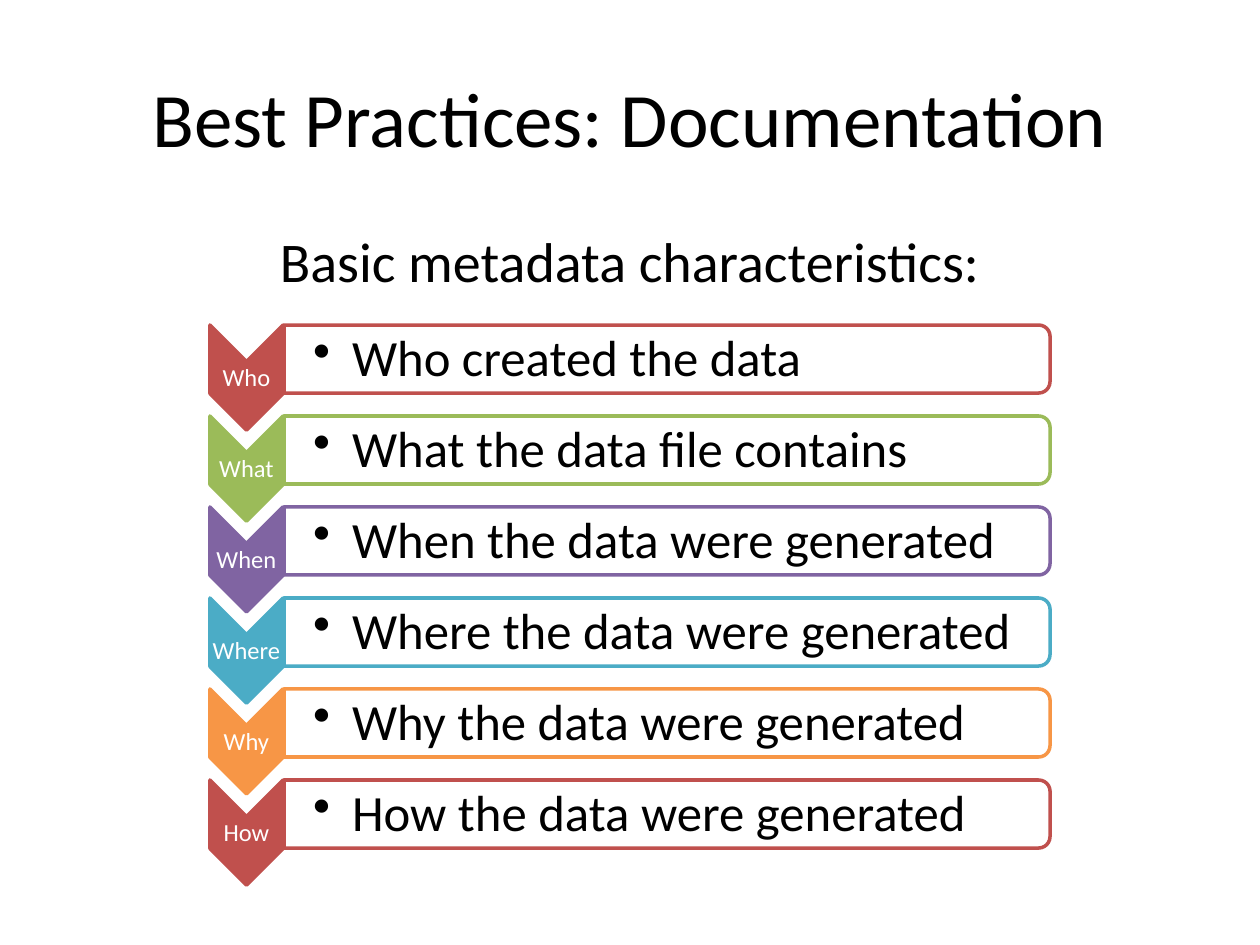
from lxml import etree
from pptx import Presentation
from pptx.dml.color import RGBColor
from pptx.enum.shapes import MSO_SHAPE
from pptx.enum.text import MSO_ANCHOR, PP_ALIGN
from pptx.oxml.ns import qn
from pptx.util import Emu, Pt

CHEVRON = MSO_SHAPE.CHEVRON
ROUND_TOP = MSO_SHAPE.ROUND_2_SAME_RECTANGLE
MIDDLE = MSO_ANCHOR.MIDDLE
TOP = MSO_ANCHOR.TOP
CENTER = PP_ALIGN.CENTER
LEFT = PP_ALIGN.LEFT

SLIDE_WIDTH, SLIDE_HEIGHT = 1260, 945
EMU_PER_PX = 9144000 / SLIDE_WIDTH
ROW_PITCH = 91
BLACK, WHITE = "000000", "FFFFFF"
RED, GREEN, PURPLE, TEAL, ORANGE = "C0504D", "9BBB59", "8064A2", "4BACC6", "F79646"

ROWS = [
    ("Who", "Who created the data", RED),
    ("What", "What the data file contains", GREEN),
    ("When", "When the data were generated", PURPLE),
    ("Where", "Where the data were generated", TEAL),
    ("Why", "Why the data were generated", ORANGE),
    ("How", "How the data were generated", RED),
]


def px(length):
    return Emu(round(length * EMU_PER_PX))


def color(value):
    return RGBColor.from_string(value)


def apply(target, values):
    for name, value in values.items():
        setattr(target, name, value)


class SlideBuilder:
    font_name = "Calibri"
    line_width = Pt(2)

    def __init__(self, slide):
        self.slide = slide

    def fill_text(self, box, text, size, ink, anchor, paragraph_format):
        apply(box.text_frame, {"word_wrap": True, "vertical_anchor": anchor})
        para = box.text_frame.paragraphs[0]
        apply(para, paragraph_format)
        span = para.add_run()
        span.text = text
        apply(span.font, {"name": self.font_name, "size": Pt(size)})
        span.font.color.rgb = color(ink)
        return para

    def placeholder(self, index, area, text, size, anchor):
        box = self.slide.placeholders[index]
        apply(box, dict(zip(("left", "top", "width", "height"), map(px, area))))
        return self.fill_text(box, text, size, BLACK, anchor, {"alignment": CENTER})

    def bullet(self, para, indent=0, mark=None):
        properties = para._p.get_or_add_pPr()
        properties.set("marL", str(px(indent)))
        properties.set("indent", str(-px(indent)))
        if mark:
            etree.SubElement(properties, qn("a:buChar")).set("char", mark)
        else:
            etree.SubElement(properties, qn("a:buNone"))

    def turned_shape(self, kind, area, fill, line, opacity=100):
        shape = self.slide.shapes.add_shape(kind, *map(px, area))
        shape.rotation = 90
        shape.shadow.inherit = False
        shape.fill.solid()
        shape.fill.fore_color.rgb = color(fill)
        shape.line.color.rgb = color(line)
        shape.line.width = self.line_width
        if opacity < 100:
            tint = shape._element.spPr.find(f"{qn('a:solidFill')}/{qn('a:srgbClr')}")
            etree.SubElement(tint, qn("a:alpha")).set("val", str(opacity * 1000))

    def text(self, area, text, size, ink, inset, left_inset, paragraph_format):
        box = self.slide.shapes.add_textbox(*map(px, area))
        margins = {f"margin_{side}": px(inset) for side in ("top", "right", "bottom")}
        apply(box.text_frame, {**margins, "margin_left": px(left_inset)})
        values = {"line_spacing": 0.9, **paragraph_format}
        return self.fill_text(box, text, size, ink, MIDDLE, values)

    def row(self, offset, label, detail, accent):
        self.turned_shape(CHEVRON, (194, 341 + offset, 105, 73), accent, accent)
        self.text((210, 363 + offset, 73, 31), label, 14, WHITE, 1, 1,
                  {"alignment": CENTER})
        self.turned_shape(ROUND_TOP, (633, offset - 24, 68, 766), WHITE, accent, 90)
        para = self.text((284, 329 + offset, 764, 62), detail, 29, BLACK, 2, 29,
                         {"alignment": LEFT, "level": 1})
        self.bullet(para, 39, "•")


def main():
    deck = Presentation()
    apply(deck, {"slide_width": px(SLIDE_WIDTH), "slide_height": px(SLIDE_HEIGHT)})
    page = SlideBuilder(deck.slides.add_slide(deck.slide_layouts[1]))
    page.placeholder(0, (63, 38, 1134, 158), "Best Practices: Documentation", 44, MIDDLE)
    heading = page.placeholder(1, (63, 220, 1134, 624),
                               "Basic metadata characteristics:", 32, TOP)
    page.bullet(heading)
    for index, (label, detail, accent) in enumerate(ROWS):
        page.row(index * ROW_PITCH, label, detail, accent)
    deck.save("out.pptx")


if __name__ == "__main__":
    main()
